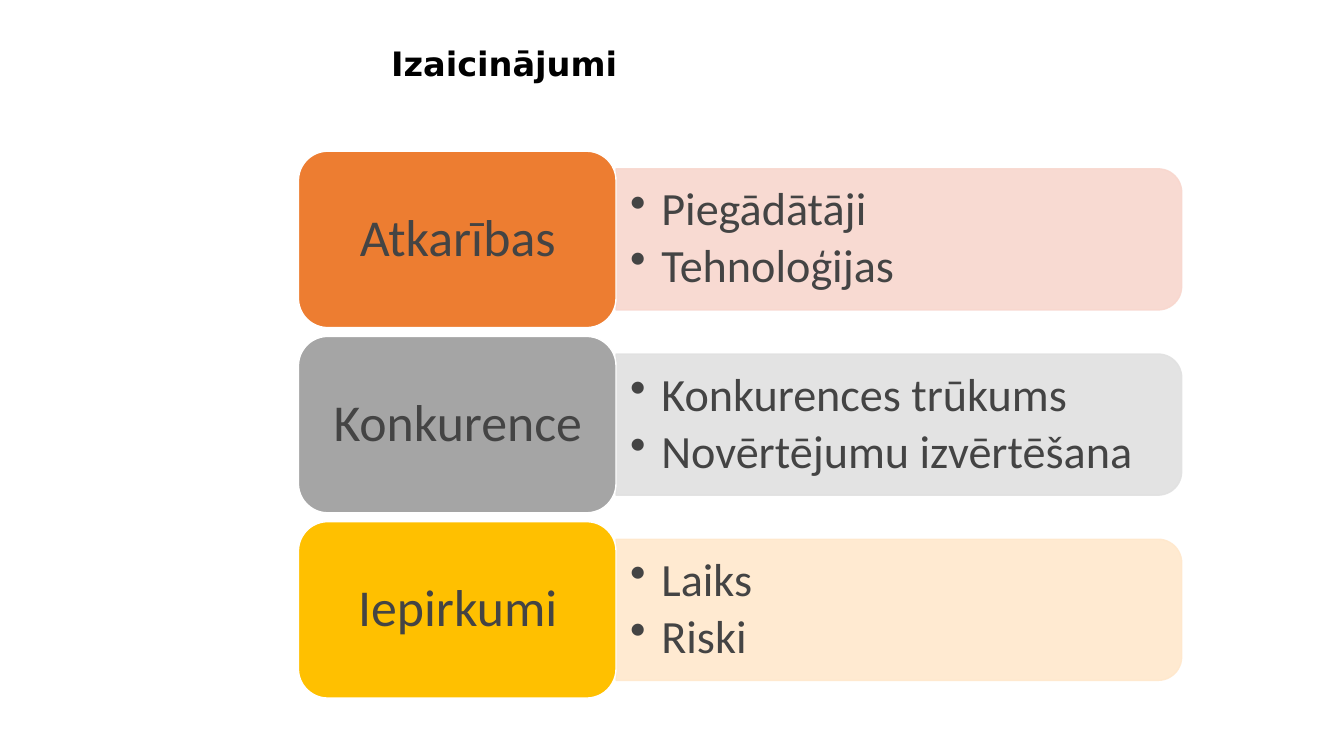
"""Build the slide of challenges: three coloured topics, each with its bullet panel."""
from dataclasses import dataclass

from lxml import etree
from pptx import Presentation
from pptx.dml.color import RGBColor
from pptx.enum.shapes import MSO_SHAPE
from pptx.enum.text import MSO_ANCHOR, PP_ALIGN
from pptx.oxml.ns import qn
from pptx.util import Inches, Pt

ROUNDED = MSO_SHAPE.ROUNDED_RECTANGLE
PANEL_SHAPE = MSO_SHAPE.ROUND_2_SAME_RECTANGLE
MIDDLE, TOP = MSO_ANCHOR.MIDDLE, MSO_ANCHOR.TOP
LEFT, CENTER = PP_ALIGN.LEFT, PP_ALIGN.CENTER

COLORS = {
    "black": "000000", "white": "FFFFFF", "text": "444444",
    "orange": "ED7D31", "pale orange": "F8D7CE",
    "gray": "A5A5A5", "pale gray": "E1E1E1",
    "yellow": "FFC000", "pale yellow": "FFE8CC",
}
ROWS_LEFT, ROWS_TOP = 2.96, 1.5
TOPIC_WIDTH, TOPIC_HEIGHT = 3.15, 1.75
ROW_PITCH = TOPIC_HEIGHT * 1.05
PANEL_WIDTH, PANEL_HEIGHT = 5.61, TOPIC_HEIGHT * 0.8
INDENT = 0.31


@dataclass(frozen=True)
class Frame:
    left: float
    top: float
    width: float
    height: float

    def lengths(self):
        return [Inches(n) for n in (self.left, self.top, self.width, self.height)]


@dataclass(frozen=True)
class TextStyle:
    size: float
    font: str = "Calibri"
    color: str = "text"
    bold: bool = False
    align: PP_ALIGN = LEFT
    anchor: MSO_ANCHOR = MIDDLE
    inset_x: float = 0.1
    inset_y: float = 0.05
    space_after: float = 0
    bullet: bool = False


@dataclass(frozen=True)
class Topic:
    name: str
    points: tuple[str, ...]
    color: str


TITLE = TextStyle(24, "DejaVu Sans", "black", bold=True, anchor=TOP)
LABEL = TextStyle(37, align=CENTER, inset_x=0.15, inset_y=0.08, space_after=13)
POINTS = TextStyle(33, inset_x=0.14, inset_y=0.07, space_after=5, bullet=True)

TOPICS = (
    Topic("Atkarības", ("Piegādātāji", "Tehnoloģijas"), "orange"),
    Topic("Konkurence", ("Konkurences trūkums", "Novērtējumu izvērtēšana"), "gray"),
    Topic("Iepirkumi", ("Laiks", "Riski"), "yellow"),
)


def rgb(name: str) -> RGBColor:
    return RGBColor.from_string(COLORS[name])


def add_bullet(para) -> None:
    para.level = 1
    properties = para._p.get_or_add_pPr()
    properties.set("marL", str(Inches(INDENT)))
    properties.set("indent", str(-Inches(INDENT)))
    etree.SubElement(properties, qn("a:buChar")).set("char", "•")


def add_text(page, frame: Frame, lines: tuple[str, ...], style: TextStyle) -> None:
    box = page.shapes.add_textbox(*frame.lengths())
    text_frame = box.text_frame
    text_frame.word_wrap = True
    text_frame.vertical_anchor = style.anchor
    text_frame.margin_left = text_frame.margin_right = Inches(style.inset_x)
    text_frame.margin_top = text_frame.margin_bottom = Inches(style.inset_y)
    text_frame.text = "\n".join(lines)
    for para in text_frame.paragraphs:
        if style.bullet:
            add_bullet(para)
        para.alignment = style.align
        para.line_spacing = 0.9
        para.space_after = Pt(style.space_after)
        for span in para.runs:
            span.font.name = style.font
            span.font.size = Pt(style.size)
            span.font.bold = style.bold
            span.font.color.rgb = rgb(style.color)


def add_block(page, kind: MSO_SHAPE, frame: Frame, fill: str, line: str):
    block = page.shapes.add_shape(kind, *frame.lengths())
    block.shadow.inherit = False
    block.fill.solid()
    block.fill.fore_color.rgb = rgb(fill)
    block.line.color.rgb = rgb(line)
    block.line.width = Pt(1)
    return block


def add_panel(page, left: float, middle: float, color: str) -> None:
    upright = Frame(left + (PANEL_WIDTH - PANEL_HEIGHT) / 2, middle - PANEL_WIDTH / 2,
                    PANEL_HEIGHT, PANEL_WIDTH)
    panel = add_block(page, PANEL_SHAPE, upright, color, color)
    panel.rotation = 90
    for color_element in panel._element.spPr.iter(qn("a:srgbClr")):
        etree.SubElement(color_element, qn("a:alpha")).set("val", "90000")


def add_topic(page, topic: Topic, top: float) -> None:
    panel_left = ROWS_LEFT + TOPIC_WIDTH
    middle = top + TOPIC_HEIGHT / 2
    add_panel(page, panel_left, middle, f"pale {topic.color}")
    add_text(page, Frame(panel_left, middle - 0.63, 5.54, 1.26), topic.points, POINTS)
    add_block(page, ROUNDED, Frame(ROWS_LEFT, top, TOPIC_WIDTH, TOPIC_HEIGHT),
              topic.color, "white")
    add_text(page, Frame(ROWS_LEFT + 0.09, middle - 0.79, 2.98, 1.58),
             (topic.name,), LABEL)


def main() -> None:
    deck = Presentation()
    deck.slide_width, deck.slide_height = Inches(13.33), Inches(7.5)
    page = deck.slides.add_slide(deck.slide_layouts[6])
    add_text(page, Frame(3.78, 0.42, 8.89, 1.13), ("Izaicinājumi",), TITLE)
    for index, topic in enumerate(TOPICS):
        add_topic(page, topic, ROWS_TOP + index * ROW_PITCH)
    deck.save("out.pptx")


if __name__ == "__main__":
    main()
